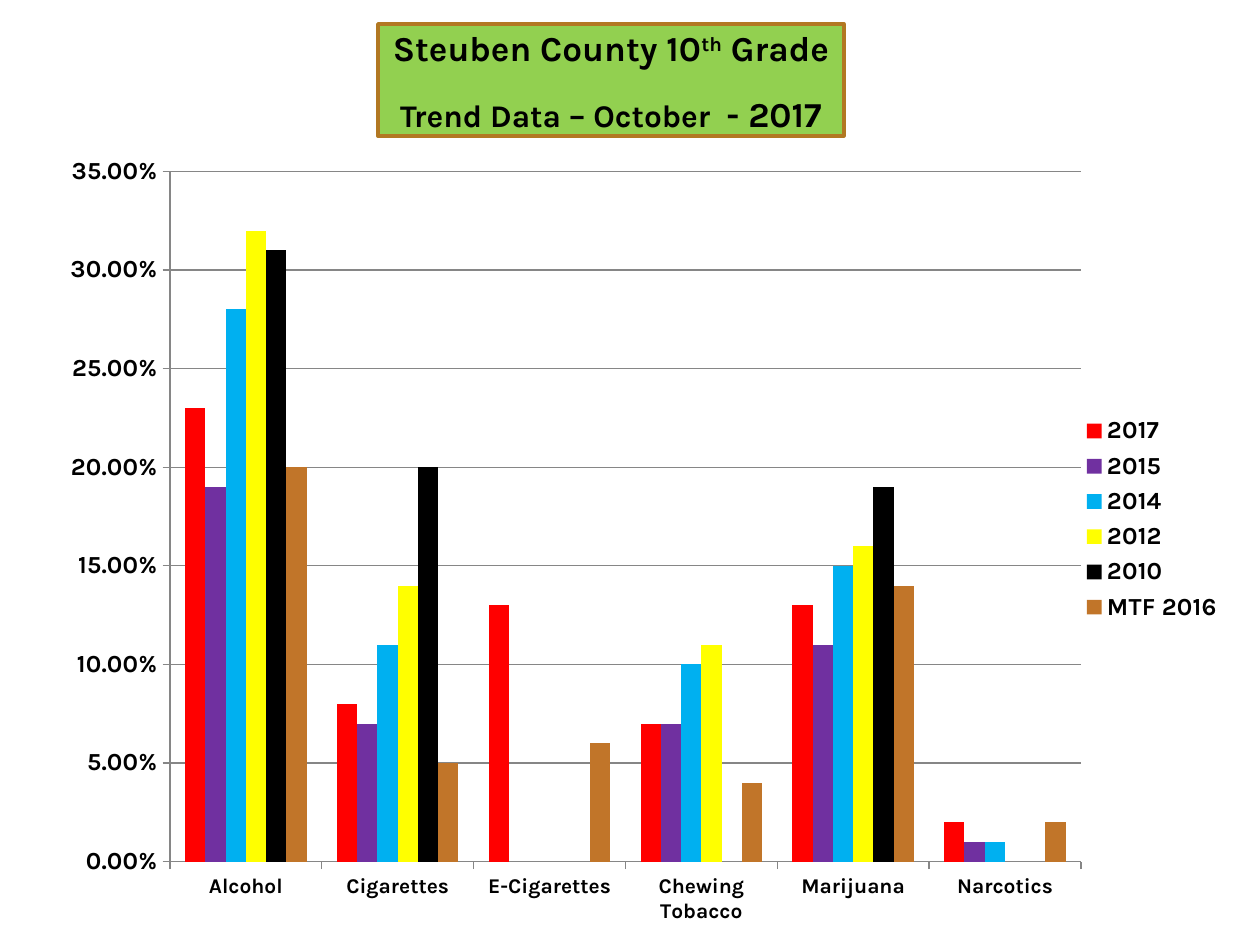
from lxml import etree
from pptx import Presentation
from pptx.chart.data import CategoryChartData
from pptx.dml.color import RGBColor
from pptx.enum.chart import XL_CHART_TYPE, XL_LEGEND_POSITION, XL_TICK_MARK
from pptx.enum.shapes import MSO_SHAPE
from pptx.enum.text import MSO_ANCHOR, PP_ALIGN
from pptx.oxml.ns import qn
from pptx.util import Pt

CLUSTERED = XL_CHART_TYPE.COLUMN_CLUSTERED
LEGEND_RIGHT = XL_LEGEND_POSITION.RIGHT
TICK_OUT = XL_TICK_MARK.OUTSIDE
RECTANGLE = MSO_SHAPE.RECTANGLE
MIDDLE = MSO_ANCHOR.MIDDLE
CENTER = PP_ALIGN.CENTER

PX = 914400 // 126
SLIDE_SIZE = (1260, 945)
HEADING_BOX = (378, 24, 466, 112)
HEADING_BOTTOM = 5
CHART_BOX = (42, 157, 1187, 767)
PLOT_BOX = (170, 171, 911, 691)
LEGEND_BOX = (1081, 410, 142, 218)

THEME = {
    "font": "Karla", "text": "000000", "grid": "868686",
    "heading_fill": "92D050", "heading_line": "B27822",
    "heading": 20, "subheading": 18, "chart": 14, "category": 12,
}

HEADING = [
    [("Steuben County 10", "heading", False), ("th", "heading", True), (" Grade", "heading", False)],
    [("Trend Data – October  ", "subheading", False), ("- 2017", "heading", False)],
]
SUBSTANCES = ["Alcohol", "Cigarettes", "E-Cigarettes", "Chewing Tobacco", "Marijuana", "Narcotics"]
SURVEYS = [
    ("2017", "FF0000", (0.23, 0.08, 0.13, 0.07, 0.13, 0.02)),
    ("2015", "7030A0", (0.19, 0.07, None, 0.07, 0.11, 0.01)),
    ("2014", "00B0F0", (0.28, 0.11, None, 0.1, 0.15, 0.01)),
    ("2012", "FFFF00", (0.32, 0.14, None, 0.11, 0.16, None)),
    ("2010", "000000", (0.31, 0.2, None, None, 0.19, None)),
    ("MTF 2016", "C17529", (0.2, 0.05, 0.06, 0.04, 0.14, 0.02)),
]


def emu(box):
    return [length * PX for length in box]


def style(font, size):
    font.name = THEME["font"]
    font.size = Pt(THEME[size])
    font.bold = True
    font.color.rgb = RGBColor.from_string(THEME["text"])


def place(part, box, position, target=None):
    for old in part.findall(qn("c:layout")):
        part.remove(old)
    left, top, width, height = CHART_BOX
    settings = {"layoutTarget": target} if target else {}
    settings.update(
        xMode="edge", yMode="edge",
        x=(box[0] - left) / width, y=(box[1] - top) / height,
        w=box[2] / width, h=box[3] / height,
    )
    layout = etree.Element(qn("c:layout"))
    manual = etree.SubElement(layout, qn("c:manualLayout"))
    for tag, setting in settings.items():
        etree.SubElement(manual, qn(f"c:{tag}")).set("val", str(setting))
    part.insert(position, layout)


def add_trend_chart(slide):
    trend = CategoryChartData(number_format="0.00%")
    trend.categories = SUBSTANCES
    for survey, _, rates in SURVEYS:
        trend.add_series(survey, rates)
    chart = slide.shapes.add_chart(CLUSTERED, *emu(CHART_BOX), trend).chart
    chart.has_title = False
    style(chart.font, "chart")
    chart.has_legend = True
    chart.legend.position = LEGEND_RIGHT
    chart.legend.include_in_layout = False
    style(chart.legend.font, "chart")

    plot = chart.plots[0]
    plot.gap_width = 150
    plot.overlap = 0
    plot.vary_by_categories = False
    for series, (_, color, _) in zip(plot.series, SURVEYS):
        series.format.fill.solid()
        series.format.fill.fore_color.rgb = RGBColor.from_string(color)
        series.invert_if_negative = False

    rates, substances = chart.value_axis, chart.category_axis
    rates.minimum_scale, rates.maximum_scale, rates.major_unit = 0, 0.35, 0.05
    rates.has_major_gridlines = True
    rates.tick_labels.number_format = "0.00%"
    rates.tick_labels.number_format_is_linked = False
    for axis, size in ((rates, "chart"), (substances, "category")):
        axis.major_tick_mark = TICK_OUT
        style(axis.tick_labels.font, size)
    for line in (rates.format.line, substances.format.line, rates.major_gridlines.format.line):
        line.color.rgb = RGBColor.from_string(THEME["grid"])
        line.width = Pt(0.75)

    place(chart._chartSpace.chart.plotArea, PLOT_BOX, 0, "inner")
    place(chart.legend._element, LEGEND_BOX, 1)


def add_heading(slide):
    heading = slide.shapes.add_shape(RECTANGLE, *emu(HEADING_BOX))
    heading.shadow.inherit = False
    heading.fill.solid()
    heading.fill.fore_color.rgb = RGBColor.from_string(THEME["heading_fill"])
    heading.line.color.rgb = RGBColor.from_string(THEME["heading_line"])
    heading.line.width = Pt(2)
    frame = heading.text_frame
    frame.word_wrap = True
    frame.vertical_anchor = MIDDLE
    frame.margin_top = 0
    frame.margin_bottom = HEADING_BOTTOM * PX
    for index, pieces in enumerate(HEADING):
        paragraph = frame.add_paragraph() if index else frame.paragraphs[0]
        paragraph.alignment = CENTER
        paragraph.line_spacing = 1.15
        paragraph.space_after = Pt(10)
        style(paragraph.font, "heading")
        for text, size, raised in pieces:
            run = paragraph.add_run()
            run.text = text
            run.font.size = Pt(THEME[size])
            if raised:
                run.font._element.set("baseline", "30000")


deck = Presentation()
deck.slide_width, deck.slide_height = emu(SLIDE_SIZE)
slide = deck.slides.add_slide(deck.slide_layouts[6])
add_trend_chart(slide)
add_heading(slide)
deck.save("out.pptx")
